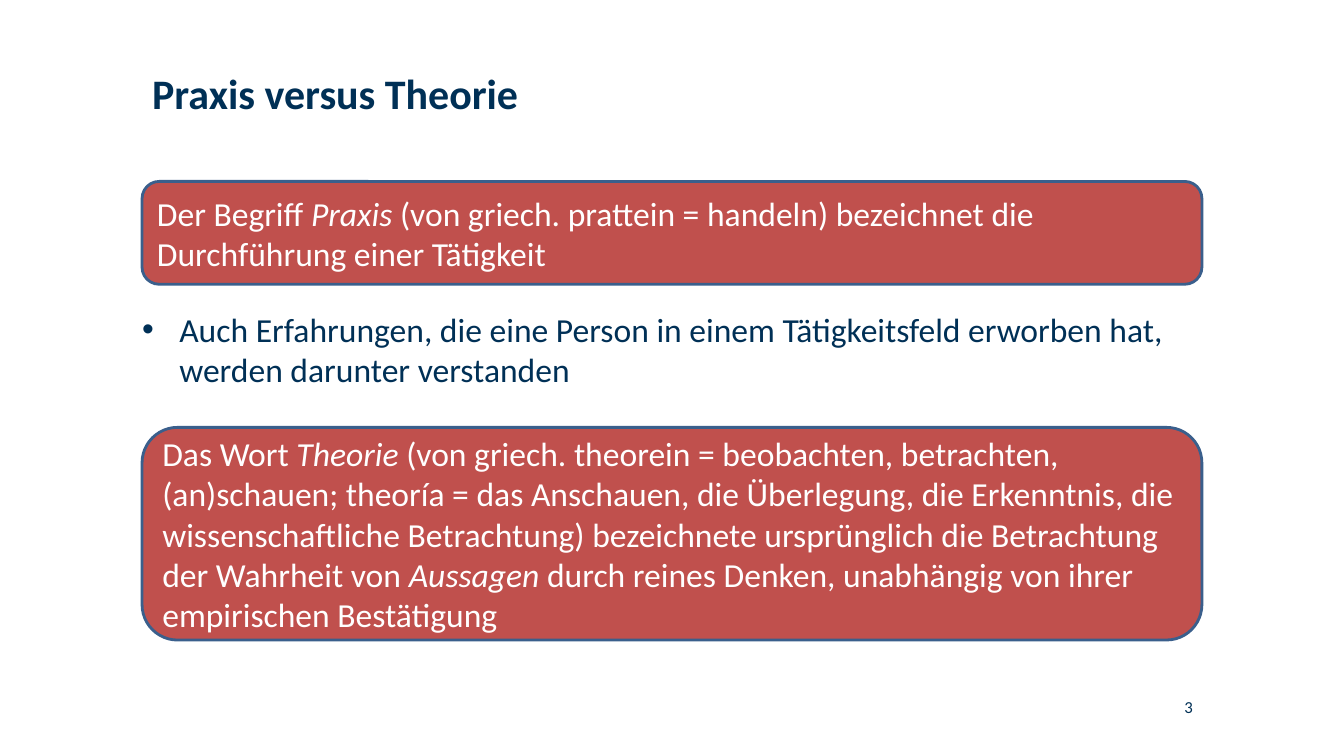
from lxml import etree
from pptx import Presentation
from pptx.dml.color import RGBColor
from pptx.enum.shapes import MSO_SHAPE
from pptx.enum.text import MSO_ANCHOR, PP_ALIGN
from pptx.oxml.ns import qn
from pptx.util import Inches, Pt

ROUNDED = MSO_SHAPE.ROUNDED_RECTANGLE
TOP, MIDDLE = MSO_ANCHOR.TOP, MSO_ANCHOR.MIDDLE
LEFT, RIGHT = PP_ALIGN.LEFT, PP_ALIGN.RIGHT
COLORS = {"navy": "003056", "red": "C0504D", "border": "3A5F8C", "white": "FFFFFF"}

deck = Presentation()
deck.slide_width, deck.slide_height = Inches(13.34), Inches(7.5)
page = deck.slides.add_slide(deck.slide_layouts[6])

# Grid of 100 columns by 100 rows
COLUMN, ROW = deck.slide_width / 100, deck.slide_height / 100
MARGIN, CARD_WIDTH = 10.57, 78.86


def grid_area(left, top, width, height):
    """Turn grid columns and rows into lengths on the slide."""
    return [round(n * unit) for n, unit in zip((left, top, width, height), (COLUMN, ROW) * 2)]


def write_spans(box, texts, size, color, align=LEFT, anchor=TOP):
    """Write one paragraph; every second text is italic."""
    frame = box.text_frame
    frame.word_wrap = True
    frame.vertical_anchor = anchor
    para = frame.paragraphs[0]
    para.alignment = align
    for index, text in enumerate(texts):
        span = para.add_run()
        span.text = text
        span.font.name = "Calibri"
        span.font.size = Pt(size)
        span.font.italic = index % 2 == 1
        span.font.color.rgb = RGBColor.from_string(COLORS[color])
    return para


plain_texts = [
    ("Praxis versus Theorie", (11.32, 8.93, 52.92, 18.27), 30, LEFT),
    ("Auch Erfahrungen, die eine Person in einem Tätigkeitsfeld erworben hat, "
     "werden darunter verstanden", (MARGIN, 40.8, 77.29, 13.6), 24, LEFT),
    ("3", (77.21, 92.13, 11.54, 2.67), 12, RIGHT),
]
paras = []
for text, area, size, align in plain_texts:
    box = page.shapes.add_textbox(*grid_area(*area))
    frame = box.text_frame
    frame.margin_left = frame.margin_right = frame.margin_top = frame.margin_bottom = 0
    paras.append(write_spans(box, [text], size, "navy", align))

title, experience, page_number = paras
title.runs[0].font.bold = True
bullet_props = experience._p.get_or_add_pPr()
bullet_props.set("marL", str(Inches(0.37)))
bullet_props.set("indent", str(-Inches(0.37)))
etree.SubElement(bullet_props, qn("a:buFont")).set("typeface", "Arial")
etree.SubElement(bullet_props, qn("a:buChar")).set("char", "•")

definitions = [
    (24, 13.6, ["Der Begriff ", "Praxis",
                " (von griech. prattein = handeln) bezeichnet die Durchführung einer Tätigkeit"]),
    (56.53, 28.13, ["Das Wort ", "Theorie",
                    " (von griech. theorein = beobachten, betrachten, (an)schauen; theoría = "
                    "das Anschauen, die Überlegung, die Erkenntnis, die wissenschaftliche "
                    "Betrachtung) bezeichnete ursprünglich die Betrachtung der Wahrheit von ",
                    "Aussagen",
                    " durch reines Denken, unabhängig von ihrer empirischen Bestätigung"]),
]
for top, height, texts in definitions:
    card = page.shapes.add_shape(ROUNDED, *grid_area(MARGIN, top, CARD_WIDTH, height))
    card.shadow.inherit = False
    card.fill.solid()
    card.fill.fore_color.rgb = RGBColor.from_string(COLORS["red"])
    card.line.color.rgb = RGBColor.from_string(COLORS["border"])
    card.line.width = Pt(2)
    write_spans(card, texts, 24, "white", anchor=MIDDLE)

deck.save("out.pptx")
